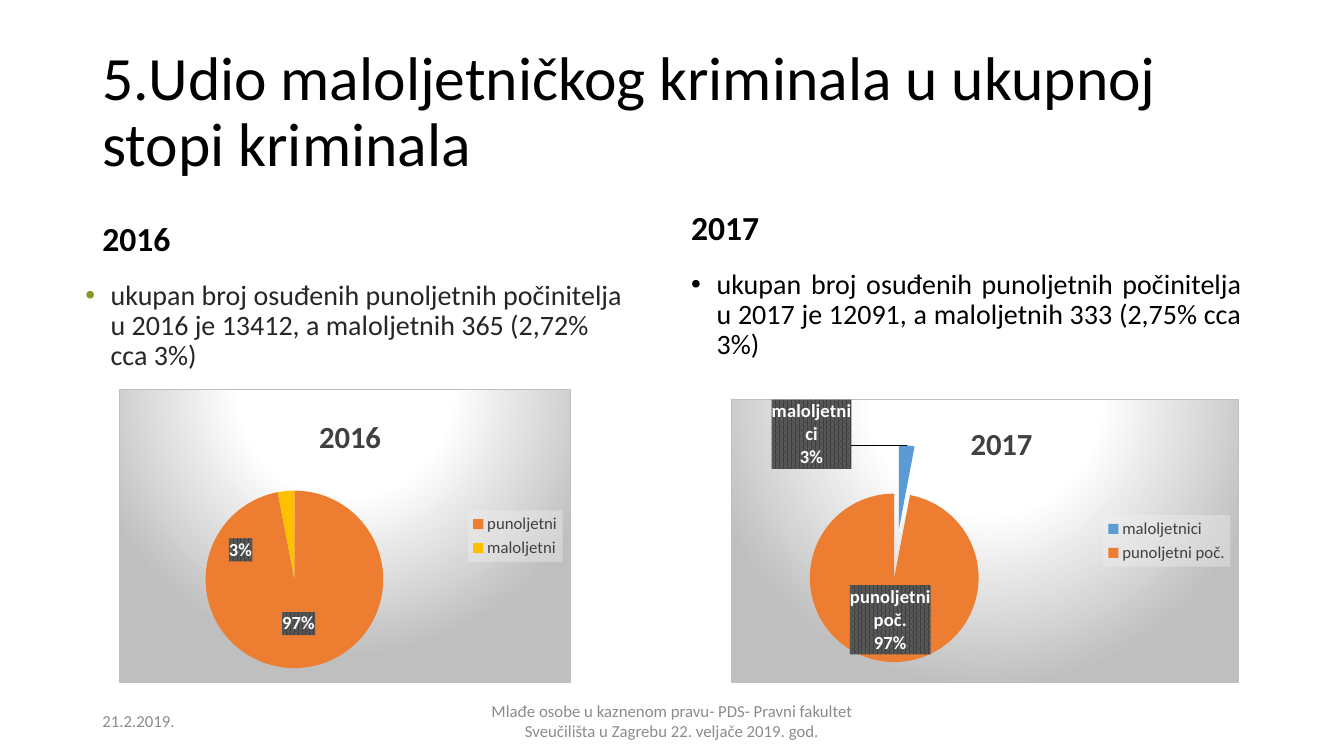
from copy import deepcopy
from dataclasses import dataclass
from typing import Any, Optional

from pptx import Presentation
from pptx.chart.data import CategoryChartData as ChartData
from pptx.dml.color import RGBColor
from pptx.enum.chart import XL_CHART_TYPE as ChartType
from pptx.enum.chart import XL_LABEL_POSITION as LabelPosition
from pptx.enum.chart import XL_LEGEND_POSITION as LegendPosition
from pptx.enum.text import MSO_ANCHOR as Anchor
from pptx.enum.text import PP_ALIGN as Align
from pptx.oxml import parse_xml
from pptx.oxml.ns import qn
from pptx.util import Cm, Pt

FONT = "Calibri"
BLACK = RGBColor(0x00, 0x00, 0x00)
WHITE = RGBColor(0xFF, 0xFF, 0xFF)
DARK = RGBColor(0x26, 0x26, 0x26)
CHART_TEXT = RGBColor(0x40, 0x40, 0x40)
LABEL_GRAIN = RGBColor(0x59, 0x59, 0x59)
FOOTER_GREY = RGBColor(0x8C, 0x8C, 0x8C)
EDGE_GREY = RGBColor(0xBF, 0xBF, 0xBF)
LEGEND_GREY = RGBColor(0xF2, 0xF2, 0xF2)
GREEN = RGBColor(0x83, 0x99, 0x2A)
ORANGE = RGBColor(0xED, 0x7D, 0x31)
YELLOW = RGBColor(0xFF, 0xC0, 0x00)
BLUE = RGBColor(0x5B, 0x9B, 0xD5)

XMLNS = ('xmlns:c="http://schemas.openxmlformats.org/drawingml/2006/chart" '
         'xmlns:a="http://schemas.openxmlformats.org/drawingml/2006/main"')

CHART_FILL = f"""<a:gradFill><a:gsLst>
<a:gs pos="0"><a:srgbClr val="{WHITE}"/></a:gs>
<a:gs pos="39000"><a:srgbClr val="{WHITE}"/></a:gs>
<a:gs pos="100000"><a:srgbClr val="{EDGE_GREY}"/></a:gs></a:gsLst>
<a:path path="circle"><a:fillToRect l="50000" t="-80000" r="50000" b="180000"/></a:path>
</a:gradFill><a:ln w="9525"><a:solidFill><a:srgbClr val="{EDGE_GREY}"/></a:solidFill></a:ln>"""
LEGEND_FILL = (f'<a:solidFill><a:srgbClr val="{LEGEND_GREY}">'
               '<a:alpha val="39000"/></a:srgbClr></a:solidFill>')
LABEL_FILL = (f'<a:pattFill prst="pct75"><a:fgClr><a:srgbClr val="{CHART_TEXT}"/></a:fgClr>'
              f'<a:bgClr><a:srgbClr val="{LABEL_GRAIN}"/></a:bgClr></a:pattFill>')


@dataclass
class Passage:
    text: str
    box: tuple[float, float, float, float]
    font: dict[str, Any]
    paragraph: dict[str, Any]
    anchor: Anchor = Anchor.MIDDLE
    bullet: Optional[RGBColor] = None


@dataclass
class Pie:
    title: str
    box: tuple[float, float, float, float]
    slices: dict[str, tuple[int, RGBColor]]
    title_at: tuple[float, float]
    plot_at: tuple[float, float, float, float]
    moved_label: int
    label_shift: tuple[float, float]
    named_labels: bool = False
    explosion: int = 0


def assign(target: Any, values: dict[str, Any]) -> None:
    for name, value in values.items():
        setattr(target, name, value)


def set_font(font: Any, size: float, color: RGBColor, bold: bool = False) -> None:
    assign(font, {"name": FONT, "size": Pt(size), "bold": bold})
    font.color.rgb = color


def chart_xml(tag: str, content: str) -> Any:
    return parse_xml(f"<c:{tag} {XMLNS}>{content}</c:{tag}>")


def layout_xml(values: tuple[float, ...], edge: bool = True, inner: bool = False) -> Any:
    content = '<c:layoutTarget val="inner"/>' if inner else ""
    if edge:
        content += '<c:xMode val="edge"/><c:yMode val="edge"/>'
    content += "".join(f'<c:{tag} val="{value}"/>' for tag, value in zip("xywh", values))
    return chart_xml("layout", f"<c:manualLayout>{content}</c:manualLayout>")


def drop_layout(element: Any) -> None:
    for layout in element.findall(qn("c:layout")):
        element.remove(layout)


def fill_before_text(element: Any, fill: str) -> None:
    element.find(qn("c:txPr")).addprevious(chart_xml("spPr", fill))


def add_passage(slide: Any, passage: Passage) -> None:
    frame = slide.shapes.add_textbox(*map(Cm, passage.box)).text_frame
    assign(frame, {"word_wrap": True, "vertical_anchor": passage.anchor})
    paragraph = frame.paragraphs[0]
    assign(paragraph, passage.paragraph)
    run = paragraph.add_run()
    run.text = passage.text
    set_font(run.font, **passage.font)
    if passage.bullet is not None:
        properties = paragraph._p.get_or_add_pPr()
        properties.set("marL", str(Cm(0.64)))
        properties.set("indent", str(-Cm(0.64)))
        for content in (f'buClr {XMLNS}><a:srgbClr val="{passage.bullet}"/></a:buClr>',
                        f'buFont {XMLNS} typeface="Arial"/>',
                        f'buChar {XMLNS} char="•"/>'):
            properties.append(parse_xml(f"<a:{content}"))


def add_labels(series: Any, pie: Pie) -> None:
    labels = series.data_labels
    set_font(labels.font, 13.3, WHITE, True)
    assign(labels, {"show_percentage": True, "show_value": False,
                    "show_category_name": pie.named_labels,
                    "position": LabelPosition.CENTER})
    element = labels._element
    fill_before_text(element, LABEL_FILL)
    if pie.named_labels:
        element.find(qn("c:showBubbleSize")).addnext(chart_xml("separator", "\n"))
    moved = chart_xml("dLbl", f'<c:idx val="{pie.moved_label}"/>')
    moved.append(layout_xml(pie.label_shift, edge=False))
    for child in element:
        if child.tag != qn("c:showLeaderLines"):
            moved.append(deepcopy(child))
    element.insert(0, moved)


def add_pie(slide: Any, pie: Pie) -> None:
    data = ChartData()
    data.categories = list(pie.slices)
    data.add_series(pie.title, [value for value, _ in pie.slices.values()])
    chart = slide.shapes.add_chart(ChartType.PIE, *map(Cm, pie.box), data).chart
    set_font(chart.font, 10, BLACK)
    space = chart._chartSpace
    fill_before_text(space, CHART_FILL)
    for corners in space.findall(qn("c:roundedCorners")):
        space.remove(corners)
    space.find(qn("c:chart")).addprevious(
        parse_xml(f'<c:roundedCorners {XMLNS} val="0"/>'))

    assign(chart, {"has_title": True, "has_legend": True})
    title = chart.chart_title
    title.text_frame.text = pie.title
    set_font(title.text_frame.paragraphs[0].runs[0].font, 22, CHART_TEXT, True)
    drop_layout(title._element)
    title._element.find(qn("c:tx")).addnext(layout_xml(pie.title_at))

    legend = chart.legend
    assign(legend, {"position": LegendPosition.RIGHT, "include_in_layout": False})
    set_font(legend.font, 12, CHART_TEXT)
    fill_before_text(legend._element, LEGEND_FILL)

    plot = chart.plots[0]
    plot.vary_by_categories = True
    area = plot._element.getparent()
    drop_layout(area)
    area.insert(0, layout_xml(pie.plot_at, inner=True))
    series = plot.series[0]
    for index, (_, color) in enumerate(pie.slices.values()):
        slice_format = series.points[index].format
        slice_format.fill.solid()
        slice_format.fill.fore_color.rgb = color
        slice_format.line.fill.background()
    if pie.explosion:
        series._element.find(qn("c:dPt")).addprevious(
            parse_xml(f'<c:explosion {XMLNS} val="{pie.explosion}"/>'))
    add_labels(series, pie)


HEADING = {"size": 24, "color": BLACK, "bold": True}
FOOTER = {"size": 12, "color": FOOTER_GREY}
TIGHT = {"line_spacing": 0.9}
SPACED = {**TIGHT, "space_before": Pt(10)}

PASSAGES = [
    Passage("5.Udio maloljetničkog kriminala u ukupnoj stopi kriminala",
            (2.33, 1.02, 29.21, 3.68), {"size": 44, "color": BLACK}, TIGHT),
    Passage("2016", (2.33, 4.98, 13.1, 1.67), HEADING, SPACED, Anchor.BOTTOM),
    Passage("ukupan broj osuđenih punoljetnih počinitelja u 2016 je 13412, "
            "a maloljetnih 365 (2,72% cca 3%)", (1.9, 6.96, 14.13, 10.72),
            {"size": 20, "color": DARK}, SPACED, Anchor.TOP, GREEN),
    Passage("2017", (17.17, 4.7, 13.1, 1.67), HEADING, SPACED, Anchor.BOTTOM),
    Passage("ukupan broj osuđenih punoljetnih počinitelja u 2017 je 12091, "
            "a maloljetnih 333 (2,75% cca 3%)", (17.17, 6.68, 14.37, 10.54),
            {"size": 20, "color": BLACK}, {**SPACED, "alignment": Align.JUSTIFY},
            Anchor.TOP, BLACK),
    Passage("21.2.2019.", (2.33, 17.65, 7.62, 1.02), FOOTER, {}),
    Passage("Mlađe osobe u kaznenom pravu- PDS- Pravni fakultet Sveučilišta u Zagrebu "
            "22. veljače 2019. god.", (11.22, 17.65, 11.43, 1.02), FOOTER,
            {"alignment": Align.CENTER}),
]

PIES = [
    Pie("2016", (3, 9.8, 11.4, 7.42),
        {"punoljetni": (97, ORANGE), "maloljetni": (3, YELLOW)},
        (0.43, 0.07), (0.19, 0.345, 0.395, 0.605), 1, (-0.11, 0.05)),
    Pie("2017", (18.43, 10.06, 12.8, 7.14),
        {"maloljetnici": (3, BLUE), "punoljetni poč.": (97, ORANGE)},
        (0.46, 0.06), (0.04, 0.16, 0.57, 0.77), 0, (-0.18, -0.23), True, 29),
]


def main() -> None:
    deck = Presentation()
    assign(deck, {"slide_width": Cm(33.87), "slide_height": Cm(19.05)})
    slide = deck.slides.add_slide(deck.slide_layouts[6])
    for passage in PASSAGES:
        add_passage(slide, passage)
    for pie in PIES:
        add_pie(slide, pie)
    deck.save("out.pptx")


if __name__ == "__main__":
    main()
